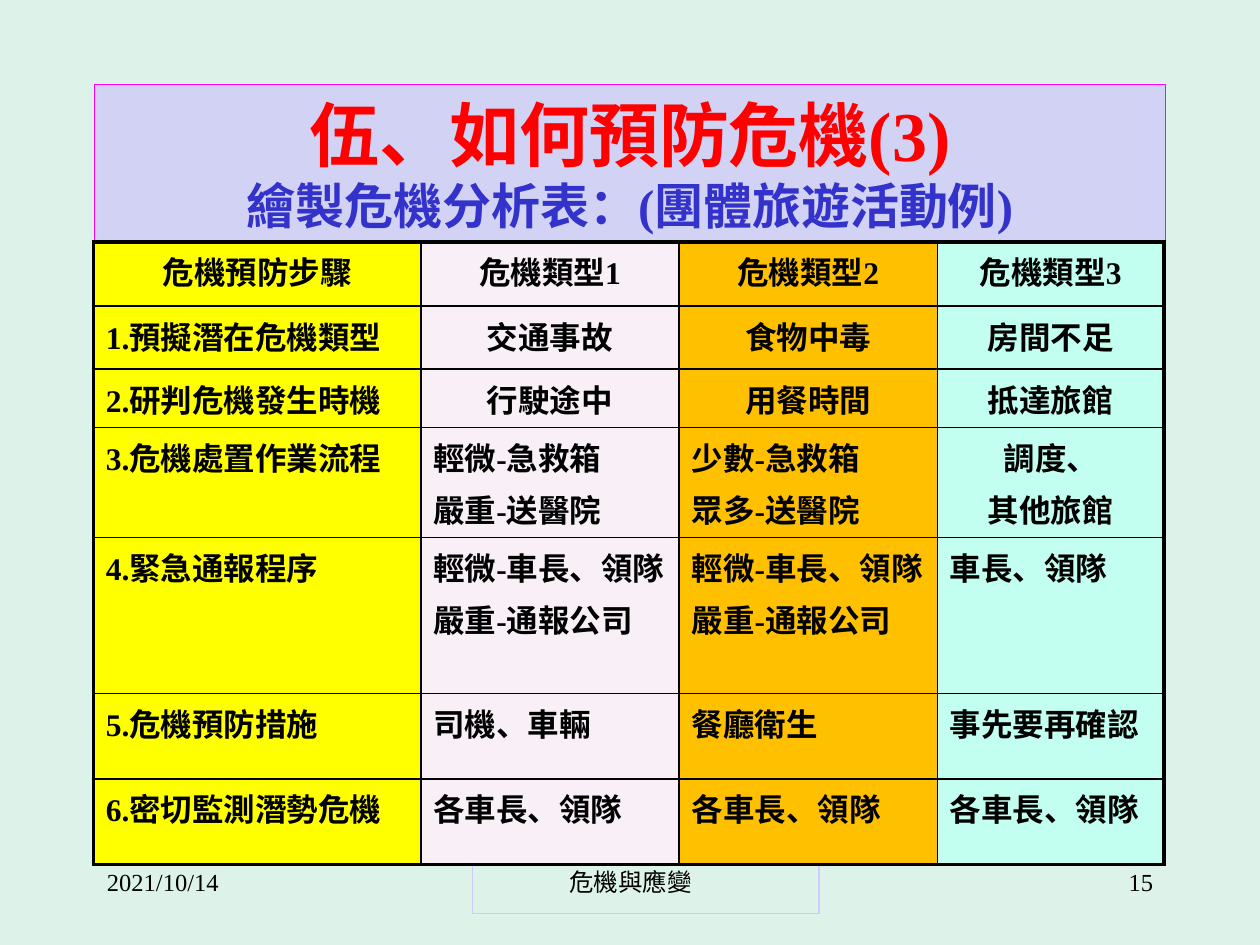
import pptx
import pptx.util
import pptx.dml.color
import pptx.enum.shapes
import pptx.enum.text
import pptx.oxml
import pptx.oxml.ns

Inches, Pt = pptx.util.Inches, pptx.util.Pt
RGBColor = pptx.dml.color.RGBColor
ALIGN, ANCHOR = pptx.enum.text.PP_ALIGN, pptx.enum.text.MSO_ANCHOR

FONT = "Times New Roman"
BLACK = RGBColor(0, 0, 0)
RED = RGBColor(0xFF, 0, 0)
BLUE = RGBColor(0x33, 0x33, 0xCC)
MINT = RGBColor(0xDD, 0xF3, 0xEA)
LAVENDER = RGBColor(0xD2, 0xD2, 0xF4)
MAGENTA = RGBColor(0xFF, 0, 0xFF)
LILAC = RGBColor(0xCC, 0xCC, 0xFF)
COLUMN_FILLS = [RGBColor(0xFF, 0xFF, 0), RGBColor(0xF8, 0xF0, 0xF6),
                RGBColor(0xFF, 0xC0, 0), RGBColor(0xC2, 0xFF, 0xF0)]

COLUMN_WIDTHS = [2.6, 2.05, 2.05, 1.8]
ROW_HEIGHTS = [0.51, 0.5, 0.42, 0.81, 0.86, 0.68, 0.68]
ROWS = [
    ["危機預防步驟", "危機類型1", "危機類型2", "危機類型3"],
    ["1.預擬潛在危機類型", "交通事故", "食物中毒", "房間不足"],
    ["2.研判危機發生時機", "行駛途中", "用餐時間", "抵達旅館"],
    ["3.危機處置作業流程", "輕微-急救箱\n嚴重-送醫院",
     "少數-急救箱\n眾多-送醫院", "調度、\n其他旅館"],
    ["4.緊急通報程序", "輕微-車長、領隊\n嚴重-通報公司",
     "輕微-車長、領隊\n嚴重-通報公司", "車長、領隊"],
    ["5.危機預防措施", "司機、車輛", "餐廳衛生", "事先要再確認"],
    ["6.密切監測潛勢危機", "各車長、領隊", "各車長、領隊", "各車長、領隊"],
]


def add_run(p, text, size, color=BLACK, bold=False):
    r = p.add_run()
    r.text = text
    r.font.name = FONT
    r.font.size = Pt(size)
    r.font.bold = bold
    r.font.color.rgb = color


def add_box(s, left, top, width, height, line, weight, fill=None):
    sp = s.shapes.add_shape(pptx.enum.shapes.MSO_SHAPE.RECTANGLE, Inches(left),
                            Inches(top), Inches(width), Inches(height))
    sp.shadow.inherit = False
    if fill is None:
        sp.fill.background()
    else:
        sp.fill.solid()
        sp.fill.fore_color.rgb = fill
    sp.line.color.rgb = line
    sp.line.width = Pt(weight)
    return sp


def add_title(s):
    sp = add_box(s, 0.75, 0.67, 8.5, 1.25, MAGENTA, 0.5, LAVENDER)
    tf = sp.text_frame
    tf.word_wrap = True
    tf.vertical_anchor = ANCHOR.MIDDLE
    p = tf.paragraphs[0]
    p.alignment = ALIGN.CENTER
    add_run(p, "伍、如何預防危機(3)", 40, RED, True)
    p.add_line_break()
    add_run(p, "繪製危機分析表：(團體旅遊活動例)", 28, BLUE, True)


def add_footer(s, text, left, width, align):
    sp = s.shapes.add_textbox(Inches(left), Inches(6.83), Inches(width), Inches(0.5))
    sp.text_frame.word_wrap = True
    p = sp.text_frame.paragraphs[0]
    p.alignment = align
    add_run(p, text, 14)


def set_borders(cell, outer):
    """Draw thick lines on the outer sides and thin lines on the others."""
    tc_pr = cell._tc.get_or_add_tcPr()
    for side in "LRTB":
        width = Pt(2.25 if side in outer else 1)
        tc_pr.append(pptx.oxml.parse_xml(
            f'<a:ln{side} {pptx.oxml.ns.nsdecls("a")} w="{width}"><a:solidFill>'
            f'<a:srgbClr val="{BLACK}"/></a:solidFill></a:ln{side}>'))


def is_centered(row, col):
    return row == 0 or (col > 0 and row < 3) or (row, col) == (3, 3)


def fill_cell(cell, text, align, fill, outer):
    set_borders(cell, outer)
    cell.fill.solid()
    cell.fill.fore_color.rgb = fill
    tf = cell.text_frame
    for i, line in enumerate(text.split("\n")):
        p = tf.add_paragraph() if i else tf.paragraphs[0]
        p.alignment = align
        p.space_before = Pt(3.6)
        add_run(p, line, 18, bold=True)


def add_crisis_table(s):
    table = s.shapes.add_table(
        len(ROWS), len(COLUMN_WIDTHS), Inches(0.74), Inches(1.92),
        Inches(sum(COLUMN_WIDTHS)), Inches(sum(ROW_HEIGHTS))).table
    table.first_row = table.horz_banding = False
    for column, width in zip(table.columns, COLUMN_WIDTHS):
        column.width = Inches(width)
    last_row, last_col = len(ROWS) - 1, len(COLUMN_WIDTHS) - 1
    for i, texts in enumerate(ROWS):
        table.rows[i].height = Inches(ROW_HEIGHTS[i])
        for j, text in enumerate(texts):
            outer = {0: "L", last_col: "R"}.get(j, "") + {0: "T", last_row: "B"}.get(i, "")
            align = ALIGN.CENTER if is_centered(i, j) else ALIGN.LEFT
            fill_cell(table.cell(i, j), text, align, COLUMN_FILLS[j], outer)


def main():
    prs = pptx.Presentation()
    prs.slide_width, prs.slide_height = Inches(10), Inches(7.5)
    s = prs.slides.add_slide(prs.slide_layouts[6])
    s.background.fill.solid()
    s.background.fill.fore_color.rgb = MINT

    # Footer frame, behind the table
    add_box(s, 3.75, 6.83, 2.75, 0.42, LILAC, 0.75)

    # Title and table
    add_title(s)
    add_crisis_table(s)

    # Date, footer and slide number
    add_footer(s, "2021/10/14", 0.75, 2.08, ALIGN.LEFT)
    add_footer(s, "危機與應變", 3.42, 3.17, ALIGN.CENTER)
    add_footer(s, "15", 7.17, 2.08, ALIGN.RIGHT)

    prs.save("out.pptx")


if __name__ == "__main__":
    main()
